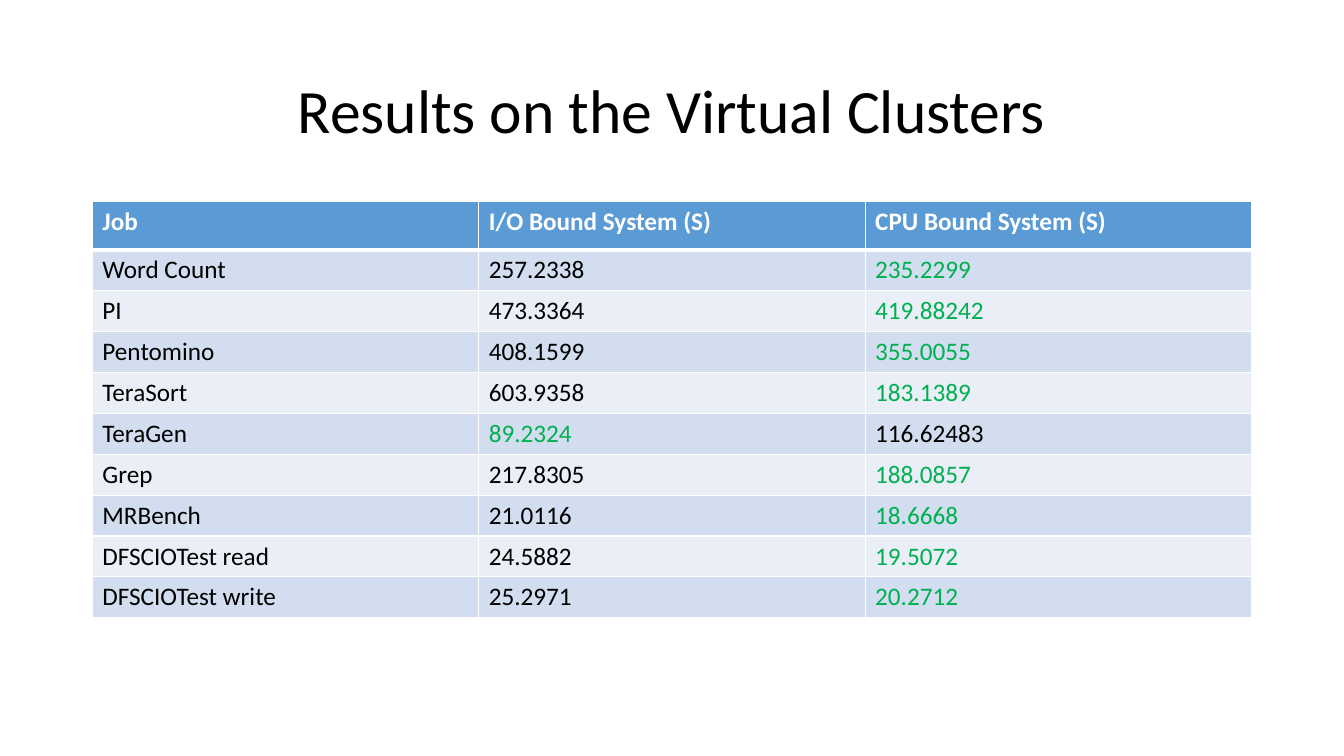
from lxml import etree
from pptx import Presentation
from pptx.dml.color import RGBColor
from pptx.enum.text import MSO_ANCHOR, PP_ALIGN
from pptx.oxml.ns import qn
from pptx.util import Pt

CENTER = PP_ALIGN.CENTER
MIDDLE = MSO_ANCHOR.MIDDLE
TITLE_ONLY_LAYOUT = 5
COLORS = {
    "text": "000000",
    "header_text": "FFFFFF",
    "best": "00B050",
    "header": "5B9BD5",
    "odd_row": "D2DEEF",
    "even_row": "EAEFF7",
    "border": "FFFFFF",
}
HEADINGS = ("Job", "I/O Bound System (S)", "CPU Bound System (S)")
RESULTS = (
    ("Word Count", "257.2338", "235.2299"),
    ("PI", "473.3364", "419.88242"),
    ("Pentomino", "408.1599", "355.0055"),
    ("TeraSort", "603.9358", "183.1389"),
    ("TeraGen", "89.2324", "116.62483"),
    ("Grep", "217.8305", "188.0857"),
    ("MRBench", "21.0116", "18.6668"),
    ("DFSCIOTest read", "24.5882", "19.5072"),
    ("DFSCIOTest write", "25.2971", "20.2712"),
)


class SlideBuilder:
    font_name = "Calibri"

    def __init__(self, slide):
        self.slide = slide

    def format_font(self, paragraph, color, **values):
        font = paragraph.font
        for name, value in {"name": self.font_name, **values}.items():
            setattr(font, name, value)
        font.color.rgb = RGBColor.from_string(COLORS[color])

    def add_title(self, text, left, top, width, height):
        title = self.slide.shapes.title
        box = {"left": left, "top": top, "width": width, "height": height}
        for name, value in box.items():
            setattr(title, name, Pt(value))
        title.text_frame.text = text
        title.text_frame.vertical_anchor = MIDDLE
        paragraph = title.text_frame.paragraphs[0]
        paragraph.alignment = CENTER
        paragraph.line_spacing = 0.9
        self.format_font(paragraph, "text", size=Pt(44))

    def add_borders(self, cell, top_width, bottom_width):
        properties = cell._tc.get_or_add_tcPr()
        widths = {"lnL": 1, "lnR": 1, "lnT": top_width, "lnB": bottom_width}
        for side, width in widths.items():
            line = etree.SubElement(properties, qn(f"a:{side}"), w=str(Pt(width)))
            fill = etree.SubElement(line, qn("a:solidFill"))
            etree.SubElement(fill, qn("a:srgbClr"), val=COLORS["border"])

    def format_cell(self, cell, text, color, fill, bold, borders):
        cell.text = text
        self.format_font(cell.text_frame.paragraphs[0], color, size=Pt(18), bold=bold)
        self.add_borders(cell, *borders)
        cell.fill.solid()
        cell.fill.fore_color.rgb = RGBColor.from_string(COLORS[fill])

    def add_results_table(self, left, top, width, header_height, row_height):
        height = header_height + row_height * len(RESULTS)
        table = self.slide.shapes.add_table(
            len(RESULTS) + 1, len(HEADINGS), Pt(left), Pt(top), Pt(width), Pt(height)
        ).table
        for column in table.columns:
            column.width = Pt(width / len(HEADINGS))
        for row in table.rows:
            row.height = Pt(row_height)
        table.rows[0].height = Pt(header_height)

        for column, heading in enumerate(HEADINGS):
            self.format_cell(
                table.cell(0, column), heading, "header_text", "header", True, (1, 3)
            )
        for row, result in enumerate(RESULTS, start=1):
            fastest = min(result[1:], key=float)
            fill = "odd_row" if row % 2 else "even_row"
            borders = (3 if row == 1 else 1, 1)
            for column, text in enumerate(result):
                color = "best" if text == fastest else "text"
                self.format_cell(
                    table.cell(row, column), text, color, fill, False, borders
                )


def main():
    presentation = Presentation()
    presentation.slide_width = Pt(960)
    presentation.slide_height = Pt(540)
    layout = presentation.slide_layouts[TITLE_ONLY_LAYOUT]
    builder = SlideBuilder(presentation.slides.add_slide(layout))
    builder.add_title("Results on the Virtual Clusters", 66, 28.75, 828, 104.4)
    builder.add_results_table(66, 144, 828, 34.5, 29.2)
    presentation.save("out.pptx")


if __name__ == "__main__":
    main()
